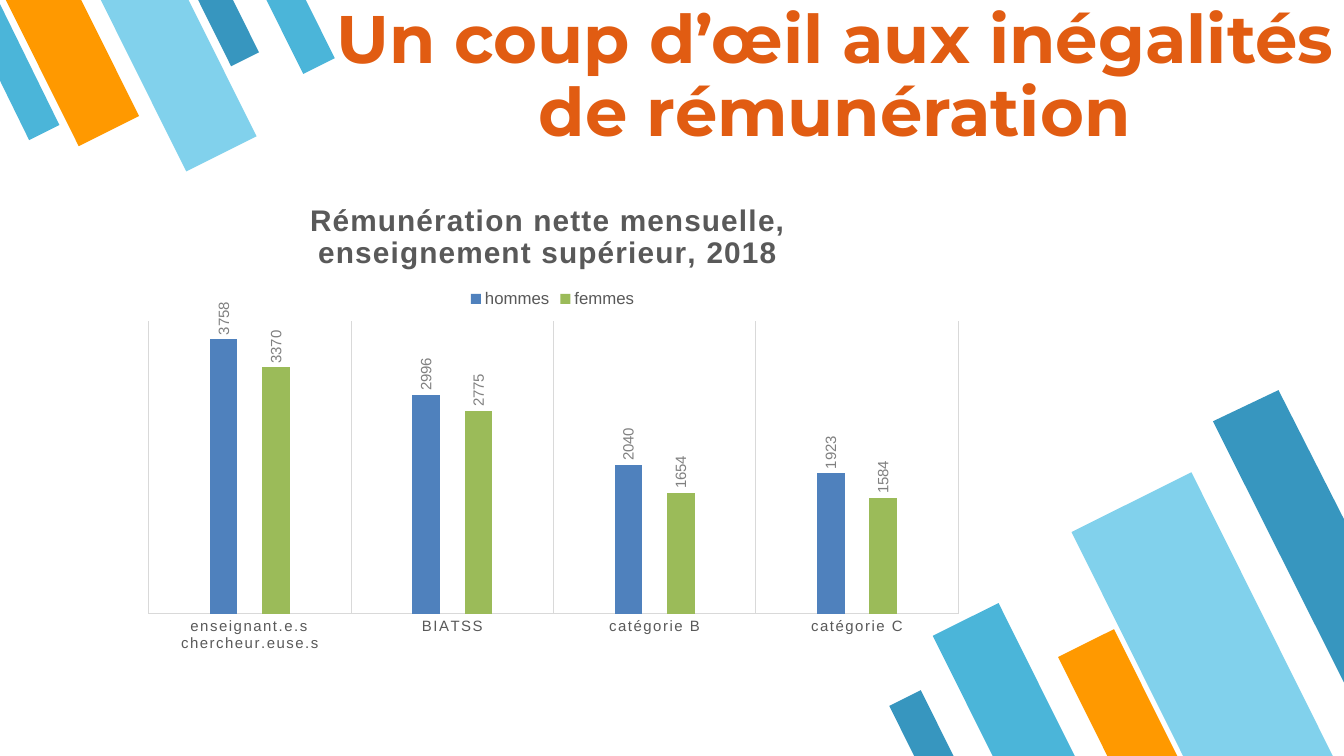
import dataclasses
import typing

import lxml.etree
import pptx
import pptx.chart.data
import pptx.dml.color
import pptx.enum.chart
import pptx.enum.shapes
import pptx.enum.text
import pptx.oxml.ns
import pptx.util

WIDTH, HEIGHT = pptx.util.Inches(13.34), pptx.util.Inches(7.5)
COLUMN, ROW = WIDTH / 100, HEIGHT / 100
SKY, PALE, DEEP, ORANGE = "4BB5D9", "81D1EC", "3796BF", "FF9900"
GREY, RULE = "595959", "D9D9D9"
LOWER_TURN, UPPER_TURN = 153.5, 333.5


@dataclasses.dataclass
class Stripe:
    column: float
    row: float
    columns: float
    rows: float
    turn: float
    color: str


@dataclasses.dataclass
class EdgeStripe:
    corners: list[tuple[float, float]]
    color: str


@dataclasses.dataclass
class Series:
    name: str
    values: tuple[int, ...]
    color: str


STRIPES = [
    Stripe(72.14, 80.67, 5.47, 24.13, LOWER_TURN, SKY),
    Stripe(84.67, 64.13, 9.97, 43.6, LOWER_TURN, PALE),
    Stripe(81.03, 84, 4.65, 20.27, LOWER_TURN, ORANGE),
    Stripe(67.47, 91.73, 2.62, 11.47, LOWER_TURN, DEEP),
    Stripe(15.74, -2.27, 2.32, 10.67, UPPER_TURN, DEEP),
    Stripe(2.77, -4, 5.02, 22.53, UPPER_TURN, ORANGE),
    Stripe(10.27, -4.4, 5.85, 26.13, UPPER_TURN, PALE),
    Stripe(20.94, -2.5, 2.62, 11.87, UPPER_TURN, SKY),
]
EDGE_STRIPES = [
    EdgeStripe([(95.13, 51.6), (90.25, 55.73), (100, 90.27), (100, 68.67)], DEEP),
    EdgeStripe([(2.17, 18.53), (4.42, 16.53), (0, 0.53), (0, 10.67)], SKY),
]
CATEGORIES = ["enseignant.e.s chercheur.euse.s", "BIATSS", "catégorie B", "catégorie C"]
SERIES = [
    Series("hommes", (3758, 2996, 2040, 1923), "4F81BD"),
    Series("femmes", (3370, 2775, 1654, 1584), "9BBB59"),
]


def rgb(color: str) -> pptx.dml.color.RGBColor:
    return pptx.dml.color.RGBColor.from_string(color)


def area(column: float, row: float, columns: float, rows: float) -> tuple[int, ...]:
    return round(column * COLUMN), round(row * ROW), round(columns * COLUMN), round(rows * ROW)


def style_font(font: typing.Any, size: float, color: str, name: str = "Arial", bold: bool = False) -> None:
    font.size, font.name, font.bold = pptx.util.Pt(size), name, bold
    font.color.rgb = rgb(color)


def write(frame: typing.Any, text: str, spacing: float | None = None, **style: typing.Any) -> None:
    """Write each line of the text as a centred paragraph."""
    for index, line in enumerate(text.split("\n")):
        para = frame.add_paragraph() if index else frame.paragraphs[0]
        para.alignment = pptx.enum.text.PP_ALIGN.CENTER
        para.line_spacing = spacing
        span = para.add_run()
        span.text = line
        style_font(span.font, **style)


def paint(shape: typing.Any, color: str) -> None:
    shape.shadow.inherit = False
    shape.fill.solid()
    shape.fill.fore_color.rgb = rgb(color)
    shape.line.fill.background()


def draw_stripe(page: typing.Any, stripe: Stripe) -> None:
    kind = pptx.enum.shapes.MSO_SHAPE.FLOWCHART_MANUAL_INPUT
    shape = page.shapes.add_shape(kind, *area(stripe.column, stripe.row, stripe.columns, stripe.rows))
    shape.rotation = stripe.turn
    shape._element.spPr.find(pptx.oxml.ns.qn("a:xfrm")).set("flipH", "1")
    paint(shape, stripe.color)


def draw_edge_stripe(page: typing.Any, stripe: EdgeStripe) -> None:
    corners = [(round(column * COLUMN), round(row * ROW)) for column, row in stripe.corners]
    builder = page.shapes.build_freeform(*corners[0])
    builder.add_line_segments(corners[1:], close=True)
    paint(builder.convert_to_shape(), stripe.color)


def place(parent: typing.Any, index: int, inner: bool = False, **percents: float) -> None:
    """Lay out a chart part by percentages of the chart's size."""
    tag = pptx.oxml.ns.qn
    for old in parent.findall(tag("c:layout")):
        parent.remove(old)
    layout = lxml.etree.Element(tag("c:layout"))
    manual = lxml.etree.SubElement(layout, tag("c:manualLayout"))
    settings = {"layoutTarget": "inner"} if inner else {}
    settings |= {"xMode": "edge", "yMode": "edge"}
    settings |= {name: str(percent / 100) for name, percent in percents.items()}
    for name, value in settings.items():
        lxml.etree.SubElement(manual, tag("c:" + name), val=value)
    parent.insert(index, layout)


def space_letters(element: typing.Any, tag: str, spacing: int) -> None:
    for properties in element.iter(pptx.oxml.ns.qn(tag)):
        properties.set("spc", str(spacing))
        properties.set("kern", "1200")


def style_axes(chart: typing.Any) -> None:
    axis = chart.category_axis
    axis.major_tick_mark = pptx.enum.chart.XL_TICK_MARK.NONE
    axis.has_major_gridlines = True
    for line in (axis.format.line, axis.major_gridlines.format.line):
        line.color.rgb = rgb(RULE)
        line.width = pptx.util.Pt(0.75)
    style_font(axis.tick_labels.font, 10.64, GREY)
    space_letters(axis._element, "a:defRPr", 120)
    chart.value_axis.minimum_scale, chart.value_axis.maximum_scale = 0, 4000
    chart.value_axis.has_major_gridlines = False
    chart.value_axis.visible = False


def style_bars(plot: typing.Any) -> None:
    plot.gap_width, plot.overlap, plot.vary_by_categories = 444, -90, False
    for bars, series in zip(plot.series, SERIES):
        bars.format.fill.solid()
        bars.format.fill.fore_color.rgb = rgb(series.color)
        labels = bars.data_labels
        labels.show_value = True
        labels.position = pptx.enum.chart.XL_LABEL_POSITION.OUTSIDE_END
        style_font(labels.font, 10.64, "808080")
        space_letters(labels._element, "a:defRPr", 0)
        for body in labels._element.iter(pptx.oxml.ns.qn("a:bodyPr")):
            body.set("rot", "-5400000")
            body.set("vert", "horz")


def draw_chart(page: typing.Any) -> None:
    chart_data = pptx.chart.data.CategoryChartData()
    chart_data.categories = CATEGORIES
    for series in SERIES:
        chart_data.add_series(series.name, series.values)
    kind = pptx.enum.chart.XL_CHART_TYPE.COLUMN_CLUSTERED
    chart = page.shapes.add_chart(kind, *area(9.75, 24, 62.67, 63.47), chart_data).chart
    style_font(chart.font, 10, "000000")
    heading = "Rémunération nette mensuelle,\nenseignement supérieur, 2018"
    write(chart.chart_title.text_frame, heading, size=21.28, color=GREY, bold=True)
    space_letters(chart.chart_title._element, "a:rPr", 100)
    place(chart.chart_title._element, 1, x=20.9, y=3.9)
    chart.has_legend = True
    chart.legend.position = pptx.enum.chart.XL_LEGEND_POSITION.TOP
    chart.legend.include_in_layout = False
    style_font(chart.legend.font, 11.97, GREY)
    place(chart.legend._element, 1, x=39.7, y=21.8)
    style_axes(chart)
    style_bars(chart.plots[0])
    place(chart._chartSpace.chart.plotArea, 0, inner=True, x=2.1, y=29.2, w=96.1, h=60.9)


def draw_title(page: typing.Any) -> None:
    frame = page.shapes.add_textbox(*area(24.74, 2, 74.74, 16.67)).text_frame
    frame.word_wrap = True
    frame.vertical_anchor = pptx.enum.text.MSO_ANCHOR.MIDDLE
    frame.margin_left = frame.margin_right = frame.margin_top = frame.margin_bottom = 0
    text = "Un coup d’œil aux inégalités de rémunération"
    write(frame, text, spacing=0.9, size=48, color="E15C12", name="Montserrat", bold=True)


def main() -> None:
    deck = pptx.Presentation()
    deck.slide_width, deck.slide_height = WIDTH, HEIGHT
    page = deck.slides.add_slide(deck.slide_layouts[6])
    for stripe in STRIPES:
        draw_stripe(page, stripe)
    for edge_stripe in EDGE_STRIPES:
        draw_edge_stripe(page, edge_stripe)
    draw_title(page)
    draw_chart(page)
    deck.save("out.pptx")


if __name__ == "__main__":
    main()
